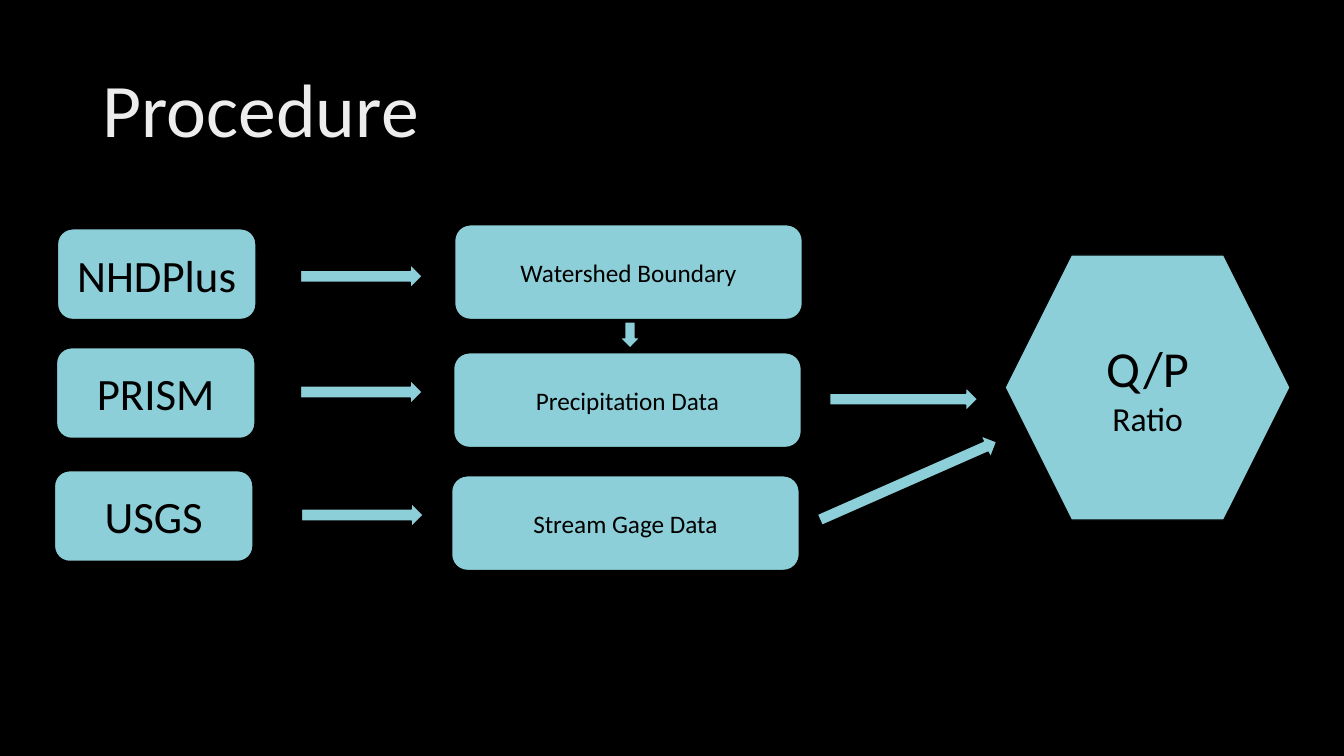
from dataclasses import dataclass

from pptx import Presentation
from pptx.dml.color import RGBColor
from pptx.enum.shapes import MSO_SHAPE
from pptx.enum.text import MSO_ANCHOR, MSO_AUTO_SIZE, PP_ALIGN
from pptx.util import Inches, Pt


@dataclass(frozen=True)
class Theme:
    font: str = "Calibri"
    back: str = "000000"
    ink: str = "000000"
    fill: str = "8DCFD8"
    title: str = "EDEDED"
    head: int = 54
    ratio: int = 36
    source: int = 32
    label: int = 24
    data: int = 18
    edge: int = 1


class Board:
    cols, rows = 40, 30

    def __init__(self, deck, theme):
        self.theme = theme
        self.unit_x = deck.slide_width / self.cols
        self.unit_y = deck.slide_height / self.rows
        self.slide = deck.slides.add_slide(deck.slide_layouts[5])
        back = self.slide.background.fill
        back.solid()
        back.fore_color.rgb = RGBColor.from_string(theme.back)

    def place(self, col, row, wide, high):
        return (round(col * self.unit_x), round(row * self.unit_y),
                round(wide * self.unit_x), round(high * self.unit_y))

    def add_text(self, para, text, size, color):
        run = para.add_run()
        run.text = text
        run.font.name = self.theme.font
        run.font.size = Pt(size)
        run.font.color.rgb = RGBColor.from_string(color)

    def title(self, text, *cell):
        shape = self.slide.shapes.title
        shape.left, shape.top, shape.width, shape.height = self.place(*cell)
        frame = shape.text_frame
        frame.auto_size = MSO_AUTO_SIZE.NONE
        frame.vertical_anchor = MSO_ANCHOR.MIDDLE
        para = frame.paragraphs[0]
        para.alignment = PP_ALIGN.LEFT
        para.line_spacing = 0.9
        self.add_text(para, text, self.theme.head, self.theme.title)

    def shape(self, kind, *cell):
        shape = self.slide.shapes.add_shape(kind, *self.place(*cell))
        shape.shadow.inherit = False
        shape.fill.solid()
        shape.fill.fore_color.rgb = RGBColor.from_string(self.theme.fill)
        shape.line.color.rgb = RGBColor.from_string(self.theme.ink)
        shape.line.width = Pt(self.theme.edge)
        return shape

    def box(self, lines, *cell, kind=MSO_SHAPE.ROUNDED_RECTANGLE):
        frame = self.shape(kind, *cell).text_frame
        frame.word_wrap = True
        frame.vertical_anchor = MSO_ANCHOR.MIDDLE
        for index, (text, size) in enumerate(lines):
            para = frame.add_paragraph() if index else frame.paragraphs[0]
            para.alignment = PP_ALIGN.CENTER
            self.add_text(para, text, size, self.theme.ink)

    def arrow(self, *cell, turn=0):
        self.shape(MSO_SHAPE.RIGHT_ARROW, *cell).rotation = turn


def main():
    deck = Presentation()
    deck.slide_width, deck.slide_height = Inches(13.33), Inches(7.5)
    theme = Theme()
    board = Board(deck, theme)
    board.title("Procedure", 2.76, 1.6, 34.5, 5.8)

    sources = (("NHDPlus", 1.71, 9.08), ("PRISM", 1.68, 13.8), ("USGS", 1.62, 18.68))
    for text, col, row in sources:
        board.box([(text, theme.source)], col, row, 5.91, 3.6)

    for col, row in ((8.94, 10.48), (8.94, 15.08), (8.97, 19.96)):
        board.arrow(col, row, 3.63, 0.96)

    results = (("Watershed Boundary", 13.53, 8.92),
               ("Precipitation Data", 13.5, 14),
               ("Stream Gage Data", 13.44, 18.88))
    for text, col, row in results:
        board.box([(text, theme.data)], col, row, 10.35, 3.76)

    board.arrow(24.69, 15.36, 4.41, 0.96)
    board.arrow(24.15, 18.6, 5.76, 0.96, turn=336.2)
    board.box([("Q/P", theme.ratio), ("Ratio", theme.label)],
              29.91, 10.12, 8.49, 10.52, kind=MSO_SHAPE.HEXAGON)
    board.arrow(18.36, 12.88, 0.78, 0.84, turn=90)
    deck.save("out.pptx")


if __name__ == "__main__":
    main()
